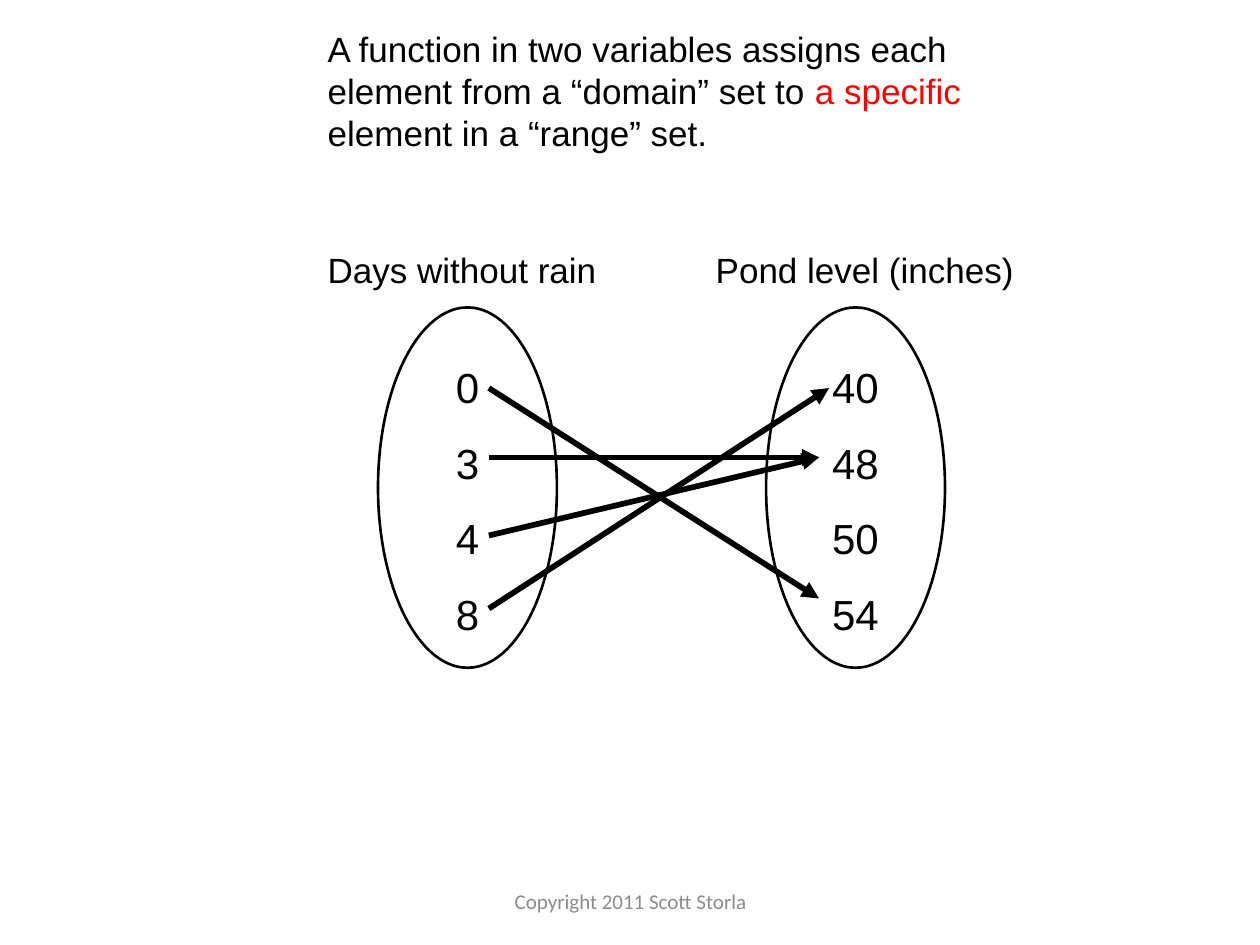
"""Build a slide that defines a function with a domain-to-range mapping."""
from dataclasses import dataclass

from lxml.etree import SubElement
from pptx import Presentation
from pptx.dml.color import RGBColor
from pptx.enum.shapes import MSO_CONNECTOR, MSO_SHAPE
from pptx.enum.text import MSO_ANCHOR, MSO_AUTO_SIZE, PP_ALIGN
from pptx.oxml.ns import qn
from pptx.util import Inches, Pt


@dataclass(frozen=True)
class Theme:
    """Hold the colours, fonts and sizes of the slide."""
    ink: RGBColor = RGBColor(0, 0, 0)
    accent: RGBColor = RGBColor(255, 0, 0)
    muted: RGBColor = RGBColor(0x8C, 0x8C, 0x8C)
    font: str = "Arial"
    footer_font: str = "Calibri"
    text: Pt = Pt(20)
    value: Pt = Pt(24)
    footer: Pt = Pt(12)
    outline: Pt = Pt(1.5)
    arrow: Pt = Pt(3.25)


THEME = Theme()
INDENT = 0.6
SET_TOP, SET_WIDTH, SET_HEIGHT = 2.44, 1.42, 2.86
LABEL_TOP, LABEL_HEIGHT = 1.92, 0.44

DEFINITION = [
    ("A function in two variables assigns each element from a “domain” set to ", THEME.ink),
    ("a specific", THEME.accent),
    (" element in a “range” set.", THEME.ink),
]
SETS = [
    ("Days without rain", 2, 3, ["0", "3", "4", "8"]),
    ("Pond level (inches)", 5.08, 3.42, ["40", "48", "50", "54"]),
]
STARTS = {"0": (3.88, 3.08), "3": (3.88, 3.63), "4": (3.88, 4.25), "8": (3.88, 4.83)}
ENDS = {"40": (6.58, 3.08), "48": (6.5, 3.63), "54": (6.5, 4.75)}
MAPPING = {"0": "54", "3": "48", "4": "48", "8": "40"}


def style(p, size, color=THEME.ink, name=THEME.font, align=PP_ALIGN.LEFT):
    """Format a whole paragraph."""
    p.alignment = align
    p.font.size, p.font.name = size, name
    p.font.color.rgb = color


def add_definition(s):
    """Put the definition in the title placeholder, key words in the accent colour."""
    sp = s.shapes.title
    sp.left, sp.top, sp.width, sp.height = map(Inches, (2, 0.17, 6, 1.11))
    tf = sp.text_frame
    tf.word_wrap, tf.auto_size = True, MSO_AUTO_SIZE.NONE
    tf.vertical_anchor, tf.margin_left = MSO_ANCHOR.TOP, Inches(INDENT)
    p = tf.paragraphs[0]
    style(p, THEME.text)
    p.line_spacing = 1.0
    for text, color in DEFINITION:
        r = p.add_run()
        r.text = text
        r.font.color.rgb = color


def add_text(s, text, box, margin=0.1, anchor=MSO_ANCHOR.TOP, **look):
    """Add a one-paragraph text box."""
    tf = s.shapes.add_textbox(*map(Inches, box)).text_frame
    tf.word_wrap, tf.vertical_anchor = True, anchor
    tf.margin_left = Inches(margin)
    p = tf.paragraphs[0]
    p.text = text
    style(p, **look)


def add_set(s, left, values):
    """Add an ellipse that lists the members of a set."""
    box = map(Inches, (left, SET_TOP, SET_WIDTH, SET_HEIGHT))
    sp = s.shapes.add_shape(MSO_SHAPE.OVAL, *box)
    sp.shadow.inherit = False
    sp.fill.background()
    sp.line.color.rgb, sp.line.width = THEME.ink, THEME.outline
    tf = sp.text_frame
    tf.word_wrap, tf.vertical_anchor = False, MSO_ANCHOR.MIDDLE
    tf.text = "\n".join(values)
    for p in tf.paragraphs:
        style(p, THEME.value, align=PP_ALIGN.CENTER)
        p.line_spacing = 1.5


def add_arrow(s, start, end):
    """Add an arrow from a domain element to its range element."""
    line = s.shapes.add_connector(MSO_CONNECTOR.STRAIGHT, *map(Inches, start + end))
    line.line.color.rgb, line.line.width = THEME.ink, THEME.arrow
    SubElement(line.line._get_or_add_ln(), qn("a:tailEnd"), type="triangle")
    SubElement(line._element.spPr, qn("a:effectLst"))


def main():
    """Build and save the slide."""
    prs = Presentation()
    prs.slide_width, prs.slide_height = Inches(10), Inches(7.5)
    s = prs.slides.add_slide(prs.slide_layouts[5])
    add_definition(s)
    for label, left, width, values in SETS:
        add_set(s, left + 1, values)
        add_text(s, label, (left, LABEL_TOP, width, LABEL_HEIGHT),
                 margin=INDENT, size=THEME.text)
    for source, target in MAPPING.items():
        add_arrow(s, STARTS[source], ENDS[target])
    add_text(s, "Copyright 2011 Scott Storla", (3.42, 6.95, 3.17, 0.4),
             anchor=MSO_ANCHOR.MIDDLE, size=THEME.footer, color=THEME.muted,
             name=THEME.footer_font, align=PP_ALIGN.CENTER)
    prs.save("out.pptx")


if __name__ == "__main__":
    main()
